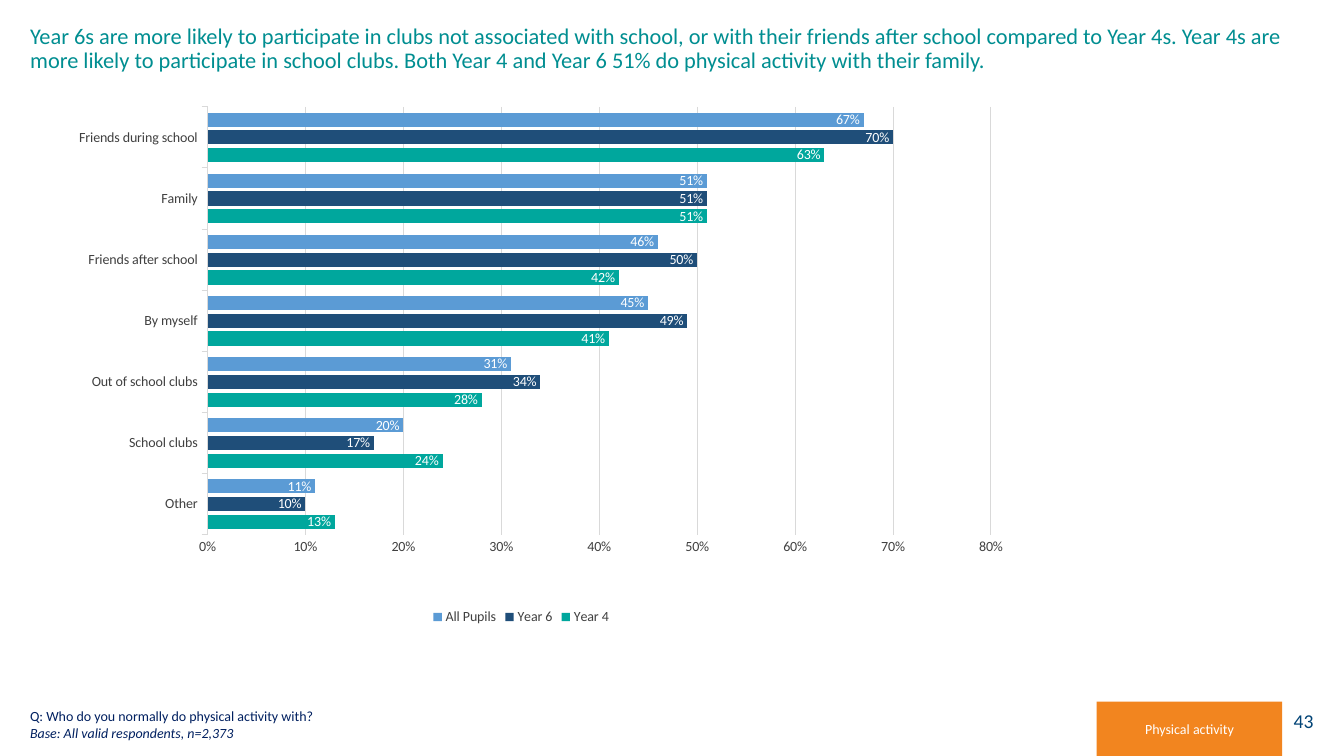
from lxml.etree import SubElement as Sub
from pptx import Presentation
from pptx.chart.data import CategoryChartData as Data
from pptx.dml.color import RGBColor
from pptx.enum.chart import XL_CHART_TYPE as Kind, XL_LABEL_POSITION as Spot
from pptx.enum.chart import XL_LEGEND_POSITION as Side, XL_TICK_MARK as Tick
from pptx.enum.shapes import MSO_SHAPE as Shape
from pptx.enum.text import MSO_ANCHOR as Anchor, PP_ALIGN as Align
from pptx.oxml.ns import qn
from pptx.util import Pt

FONT = "Calibri"
TITLE = (
    "Year 6s are more likely to participate in clubs not associated with school, "
    "or with their friends after school compared to Year 4s. Year 4s are more likely "
    "to participate in school clubs. Both Year 4 and Year 6 51% do physical activity "
    "with their family."
)
GROUPS = ["Other", "School clubs", "Out of school clubs", "By myself",
          "Friends after school", "Family", "Friends during school"]
SERIES = [
    ("Year 4", "00A79D", [0.13, 0.24, 0.28, 0.41, 0.42, 0.51, 0.63]),
    ("Year 6", "1F4E79", [0.10, 0.17, 0.34, 0.49, 0.50, 0.51, 0.70]),
    ("All Pupils", "5B9BD5", [0.11, 0.20, 0.31, 0.45, 0.46, 0.51, 0.67]),
]
PLOT = {"x": 0.187, "y": 0.03, "w": 0.782, "h": 0.795}


def paint(item, tint):
    """Give a fill, line or font part a solid colour."""
    if hasattr(item, "solid"):
        item.solid()
        item = item.fore_color
    item.rgb = RGBColor.from_string(tint)


def style(font, size, tint):
    """Set the typeface, size and colour of a font."""
    font.name, font.size = FONT, Pt(size)
    paint(font.color, tint)


def write(frame, lines, size, tint, align, anchor):
    """Fill a text frame with lines of one style."""
    frame.word_wrap = True
    frame.vertical_anchor = anchor
    frame.text = "\n".join(lines)
    for para in frame.paragraphs:
        para.alignment = align
        for run in para.runs:
            style(run.font, size, tint)


def add_title(slide, text):
    """Place the headline in the title placeholder."""
    title = slide.shapes.title
    title.left, title.top, title.width, title.height = map(Pt, (14.4, 14.4, 914.4, 70.6))
    write(title.text_frame, [text], 16, "008E91", Align.LEFT, Anchor.TOP)
    title.text_frame.paragraphs[0].line_spacing = 0.9


def add_block(slide, box, text, fill, size, tint, align):
    """Add a plain rectangle with one line of text."""
    block = slide.shapes.add_shape(Shape.RECTANGLE, *map(Pt, box))
    block.shadow.inherit = False
    paint(block.fill, fill)
    block.line.fill.background()
    write(block.text_frame, [text], size, tint, align, Anchor.MIDDLE)


def add_note(slide, box, lines):
    """Add the question and its base, the base in italics."""
    note = slide.shapes.add_textbox(*map(Pt, box))
    write(note.text_frame, lines, 10, "002060", Align.LEFT, Anchor.BOTTOM)
    note.text_frame.paragraphs[-1].runs[0].font.italic = True


def fix_plot(chart):
    """Pin the inner plot area to its share of the chart."""
    area = chart._chartSpace.chart.plotArea
    for old in area.findall(qn("c:layout")):
        area.remove(old)
    layout = area.makeelement(qn("c:layout"))
    area.insert(0, layout)
    manual = Sub(layout, qn("c:manualLayout"))
    Sub(manual, qn("c:layoutTarget"), val="inner")
    for key in "xy":
        Sub(manual, qn(f"c:{key}Mode"), val="edge")
    for key, share in PLOT.items():
        Sub(manual, qn(f"c:{key}"), val=str(share))


def style_axes(chart):
    """Format both axes and the grid."""
    cat, val = chart.category_axis, chart.value_axis
    for axis in (cat, val):
        style(axis.tick_labels.font, 10, "404040")
        axis.minor_tick_mark = Tick.NONE
    cat.major_tick_mark, val.major_tick_mark = Tick.OUTSIDE, Tick.NONE
    val.minimum_scale, val.maximum_scale, val.major_unit = 0, 0.8, 0.1
    val.tick_labels.number_format = "0%"
    val.tick_labels.number_format_is_linked = False
    val.format.line.fill.background()
    val.has_major_gridlines = True
    for line in (cat.format.line, val.major_gridlines.format.line):
        paint(line.fill, "D9D9D9")
        line.width = Pt(0.75)


def style_bars(plot):
    """Colour the bars and show their values inside the ends."""
    plot.gap_width, plot.overlap = 80, -25
    plot.vary_by_categories = False
    for bars, (_, tint, _) in zip(plot.series, SERIES):
        paint(bars.format.fill, tint)
        bars.invert_if_negative = False
        labels = bars.data_labels
        labels.show_value = True
        labels.position = Spot.INSIDE_END
        labels.number_format, labels.number_format_is_linked = "0%", False
        style(labels.font, 10, "FFFFFF")


def add_bars(slide, box):
    """Add the clustered bar chart with its legend."""
    data = Data(number_format="0%")
    data.categories = GROUPS
    for name, _, vals in SERIES:
        data.add_series(name, vals)
    chart = slide.shapes.add_chart(Kind.BAR_CLUSTERED, *map(Pt, box), data).chart
    style(chart.font, 10, "000000")
    chart.has_title = False
    chart.has_legend = True
    chart.legend.position = Side.BOTTOM
    chart.legend.include_in_layout = False
    style(chart.legend.font, 10, "404040")
    style_axes(chart)
    style_bars(chart.plots[0])
    fix_plot(chart)


def main():
    """Build the slide and save it."""
    deck = Presentation()
    deck.slide_width, deck.slide_height = Pt(960), Pt(540)
    slide = deck.slides.add_slide(deck.slide_layouts[5])
    add_block(slide, (902.9, 500.4, 42.5, 28.8), "43", "FFFFFF", 14, "004376", Align.RIGHT)
    add_title(slide, TITLE)
    add_bars(slide, (14.4, 64.8, 715.7, 384.5))
    add_note(slide, (14.4, 501.1, 530.6, 31.7),
             ["Q: Who do you normally do physical activity with?",
              "Base: All valid respondents, n=2,373"])
    add_block(slide, (783.4, 501.1, 132.5, 38.9), "Physical activity", "F2851F", 10,
              "FFFFFF", Align.CENTER)
    deck.save("out.pptx")


if __name__ == "__main__":
    main()
